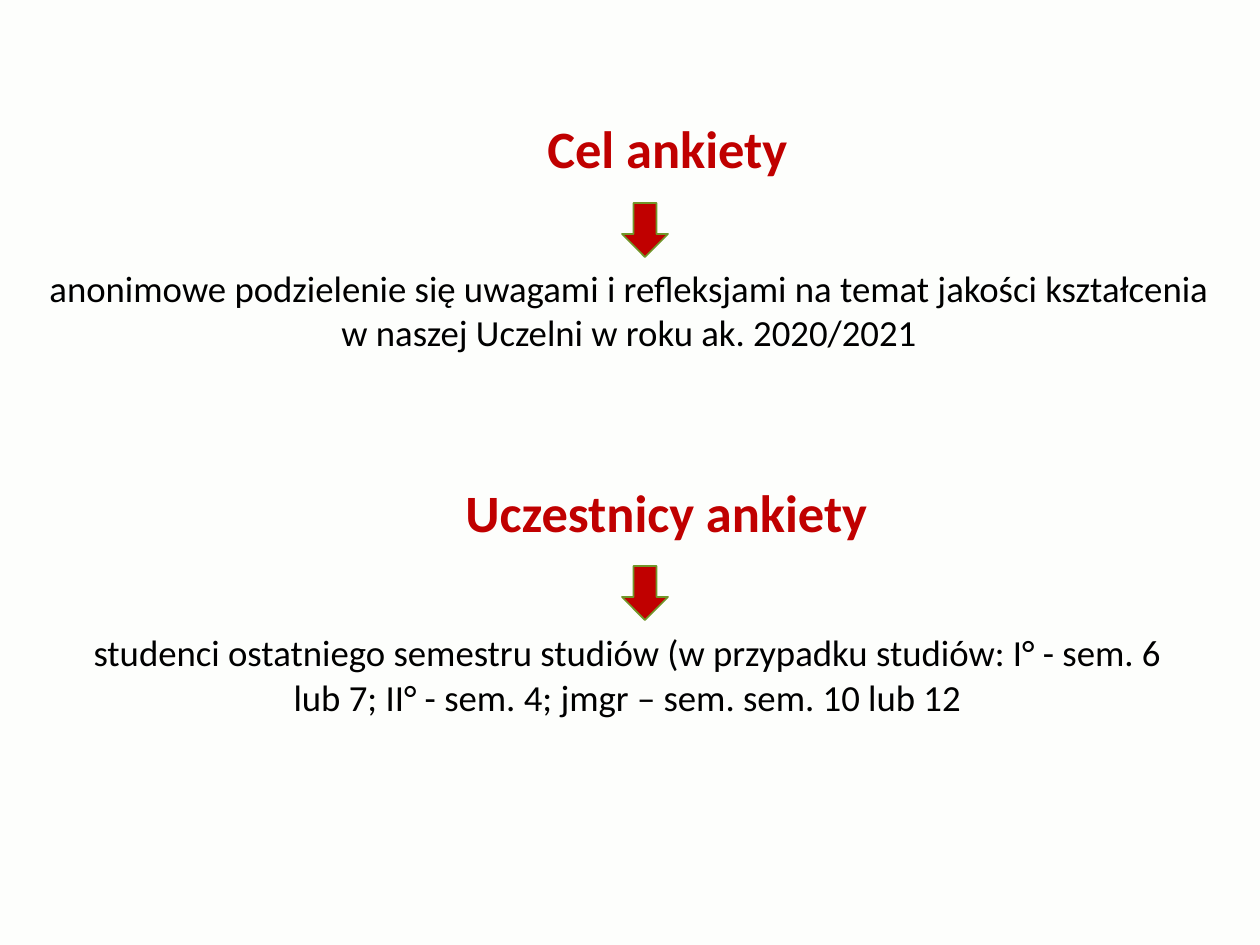
import pptx
import pptx.util
import pptx.dml.color
import pptx.enum.shapes
import pptx.enum.text

PX = 914400 / 126
COLORS = {"back": "FDFEFC", "red": "C00000", "green": "719629", "text": "000000"}


def px(n):
    return pptx.util.Emu(round(n * PX))


def color(name):
    return pptx.dml.color.RGBColor.from_string(COLORS[name])


class Page:
    font = "Calibri"

    def __init__(self, slide):
        self.slide = slide
        fill = slide.background.fill
        fill.solid()
        fill.fore_color.rgb = color("back")

    def text(self, box, lines, size, tint, bold=False, middle=False, indent=0, before=0):
        frame = self.slide.shapes.add_textbox(*map(px, box)).text_frame
        frame.word_wrap = True
        anchor = pptx.enum.text.MSO_ANCHOR
        frame.vertical_anchor = anchor.MIDDLE if middle else anchor.TOP
        frame.text = "\n".join(lines)
        for para in frame.paragraphs:
            para.alignment = pptx.enum.text.PP_ALIGN.CENTER
            para.space_before = pptx.util.Pt(before)
            if indent:
                para._p.get_or_add_pPr().set("marL", str(px(indent)))
            for run in para.runs:
                run.font.name = self.font
                run.font.size = pptx.util.Pt(size)
                run.font.bold = bold
                run.font.color.rgb = color(tint)

    def title(self, box, words):
        self.text(box, [words], 30, "red", bold=True, middle=True)

    def body(self, box, lines, indent=0, before=0):
        self.text(box, lines, 21, "text", indent=indent, before=before)

    def arrow(self, top):
        kind = pptx.enum.shapes.MSO_SHAPE.DOWN_ARROW
        shape = self.slide.shapes.add_shape(kind, px(622), px(top), px(46), px(54))
        shape.shadow.inherit = False
        shape.fill.solid()
        shape.fill.fore_color.rgb = color("red")
        shape.line.color.rgb = color("green")
        shape.line.width = pptx.util.Pt(1)


def main():
    deck = pptx.Presentation()
    deck.slide_width, deck.slide_height = px(1260), px(945)
    page = Page(deck.slides.add_slide(deck.slide_layouts[6]))
    page.title((452, 92, 431, 111), "Cel ankiety")
    page.body((35, 260, 1188, 102), [
        "anonimowe podzielenie się uwagami i refleksjami na temat jakości kształcenia",
        "w naszej Uczelni w roku ak. 2020/2021",
    ])
    page.title((438, 456, 457, 111), "Uczestnicy ankiety")
    page.body((55, 624, 1134, 265), [
        "studenci ostatniego semestru studiów (w przypadku studiów: I° - sem. 6 "
        "lub 7; II° - sem. 4; jmgr – sem. sem. 10 lub 12",
    ], indent=11, before=2.2)
    for top in (203, 566):
        page.arrow(top)
    deck.save("out.pptx")


if __name__ == "__main__":
    main()
